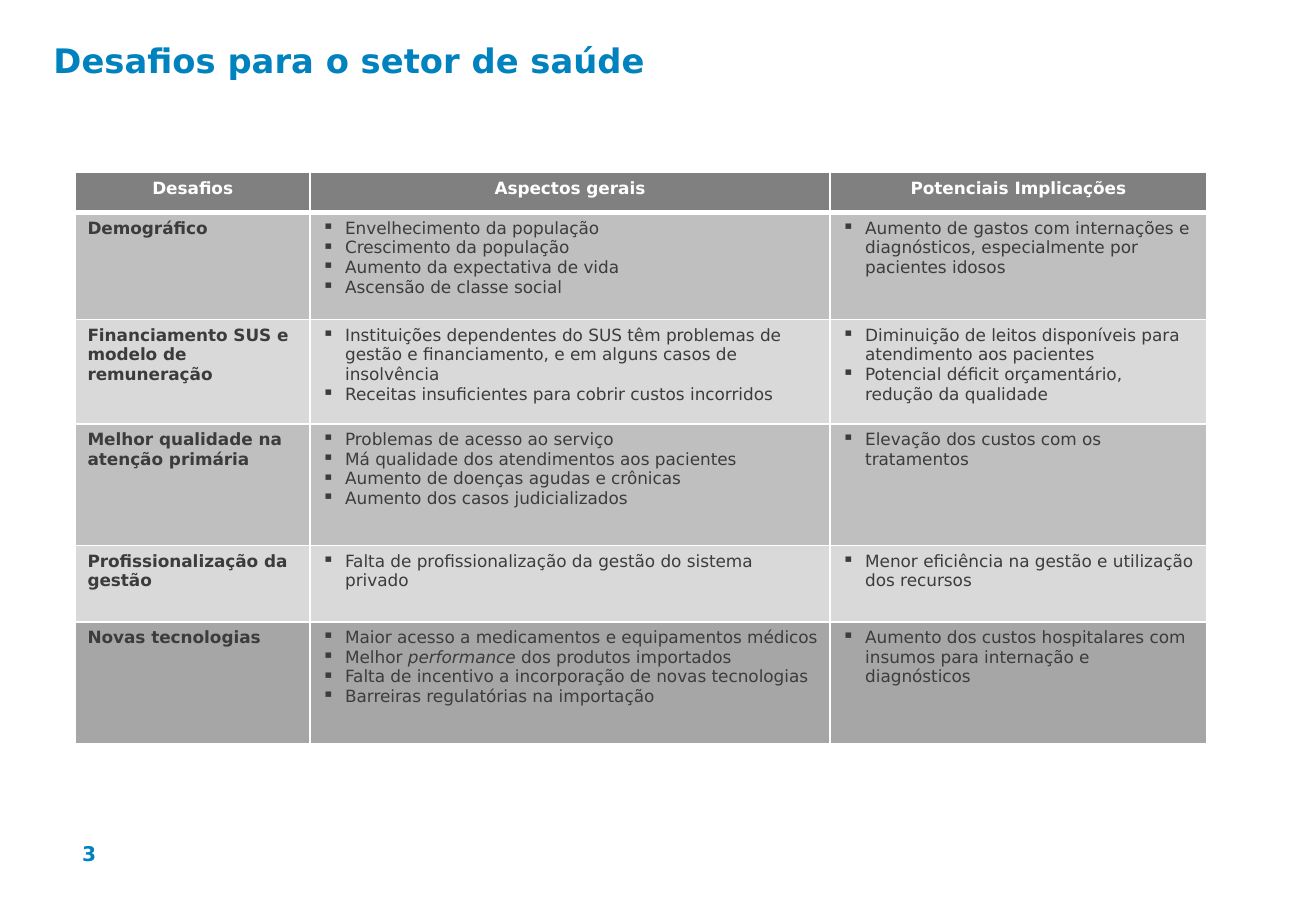
from dataclasses import dataclass

from lxml.etree import SubElement
from pptx import Presentation
from pptx.dml.color import RGBColor
from pptx.enum.text import MSO_ANCHOR, PP_ALIGN
from pptx.oxml.ns import qn
from pptx.util import Inches, Pt


@dataclass(frozen=True)
class Theme:
    font: str = "DejaVu Sans"
    blue: str = "0082BE"
    text: str = "3C3C3C"
    white: str = "FFFFFF"
    header: str = "808080"
    medium: str = "BFBFBF"
    light: str = "D9D9D9"
    dark: str = "A6A6A6"
    title_size: int = 20
    number_size: int = 12
    table_size: int = 10
    thin_line: int = 1
    header_line: int = 3


THEME = Theme()
COLUMN_WIDTHS = (1.93, 4.28, 3.1)
HEADER_HEIGHT = 0.33
HEADERS = ("Desafios", "Aspectos gerais", "Potenciais Implicações")

# Each row: height, fill, challenge, general aspects, implications; *...* is italic.
CHALLENGES = (
    (0.88, THEME.medium, "Demográfico",
     ("Envelhecimento da população",
      "Crescimento da população",
      "Aumento da expectativa de vida",
      "Ascensão de classe social"),
     ("Aumento de gastos com internações e diagnósticos, especialmente por pacientes idosos",)),
    (0.86, THEME.light, "Financiamento SUS e modelo de remuneração",
     ("Instituições dependentes do SUS têm problemas de gestão e financiamento, "
      "e em alguns casos de insolvência",
      "Receitas insuficientes para cobrir custos incorridos"),
     ("Diminuição de leitos disponíveis para atendimento aos pacientes",
      "Potencial déficit orçamentário, redução da qualidade")),
    (1, THEME.medium, "Melhor qualidade na atenção primária",
     ("Problemas de acesso ao serviço",
      "Má qualidade dos atendimentos aos pacientes",
      "Aumento de doenças agudas e crônicas",
      "Aumento dos casos judicializados"),
     ("Elevação dos custos com os tratamentos",)),
    (0.63, THEME.light, "Profissionalização da gestão",
     ("Falta de profissionalização da gestão do sistema privado",),
     ("Menor eficiência na gestão e utilização dos recursos",)),
    (1, THEME.dark, "Novas tecnologias",
     ("Maior acesso a medicamentos e equipamentos médicos",
      "Melhor *performance* dos produtos importados",
      "Falta de incentivo a incorporação de novas tecnologias",
      "Barreiras regulatórias na importação"),
     ("Aumento dos custos hospitalares com insumos para internação e diagnósticos",)),
)


def format_font(font, size, color, bold):
    values = {"name": THEME.font, "size": Pt(size), "bold": bold}
    for name, value in values.items():
        setattr(font, name, value)
    font.color.rgb = RGBColor.from_string(color)


def add_bullet(para):
    properties = para._p.get_or_add_pPr()
    indent = Inches(0.19)
    properties.set("marL", str(indent))
    properties.set("indent", str(-indent))
    SubElement(properties, qn("a:buChar"), char="▪")


def write_lines(frame, lines, size, color, bold=False, align=PP_ALIGN.LEFT, bullets=False):
    for index, line in enumerate(lines):
        para = frame.paragraphs[0] if index == 0 else frame.add_paragraph()
        para.alignment = align
        para.space_before = Pt(0)
        if bullets:
            add_bullet(para)
        for part, words in enumerate(line.split("*")):
            span = para.add_run()
            span.text = words
            format_font(span.font, size, color, bold)
            if part % 2:
                span.font.italic = True


def draw_borders(cell, top, bottom):
    properties = cell._tc.get_or_add_tcPr()
    widths = {"L": THEME.thin_line, "R": THEME.thin_line, "T": top, "B": bottom}
    for side, width in widths.items():
        line = SubElement(properties, qn(f"a:ln{side}"), w=str(Pt(width)))
        fill = SubElement(line, qn("a:solidFill"))
        SubElement(fill, qn("a:srgbClr"), val=THEME.white)


def fill_cell(cell, lines, fill, top=THEME.thin_line, bottom=THEME.thin_line,
              color=THEME.text, **text_format):
    draw_borders(cell, top, bottom)
    cell.fill.solid()
    cell.fill.fore_color.rgb = RGBColor.from_string(fill)
    write_lines(cell.text_frame, lines, THEME.table_size, color, **text_format)


def set_title(page, text):
    title = page.shapes.title
    place = {"left": 0.34, "top": 0.28, "width": 9.57, "height": 0.91}
    for name, value in place.items():
        setattr(title, name, Inches(value))
    title.text_frame.vertical_anchor = MSO_ANCHOR.TOP
    write_lines(title.text_frame, [text], THEME.title_size, THEME.blue, bold=True)


def add_challenge_table(page):
    heights = [HEADER_HEIGHT] + [row[0] for row in CHALLENGES]
    table = page.shapes.add_table(
        len(heights), len(COLUMN_WIDTHS), Inches(0.62), Inches(1.42),
        Inches(sum(COLUMN_WIDTHS)), Inches(sum(heights))).table
    table.horz_banding = False
    for column, width in zip(table.columns, COLUMN_WIDTHS):
        column.width = Inches(width)
    for row, height in zip(table.rows, heights):
        row.height = Inches(height)

    for column, text in enumerate(HEADERS):
        fill_cell(table.cell(0, column), [text], THEME.header, bottom=THEME.header_line,
                  color=THEME.white, bold=True, align=PP_ALIGN.CENTER)
    for row, (_, fill, challenge, aspects, implications) in enumerate(CHALLENGES, 1):
        top = THEME.header_line if row == 1 else THEME.thin_line
        fill_cell(table.cell(row, 0), [challenge], fill, top, bold=True)
        for column, lines in enumerate((aspects, implications), 1):
            fill_cell(table.cell(row, column), lines, fill, top, bullets=True)


def add_page_number(page, number):
    box = page.shapes.add_textbox(Inches(0.16), Inches(6.88), Inches(0.73), Inches(0.4))
    box.text_frame.word_wrap = True
    write_lines(box.text_frame, [number], THEME.number_size, THEME.blue,
                bold=True, align=PP_ALIGN.RIGHT)


def main():
    deck = Presentation()
    deck.slide_width = Inches(10.83)
    deck.slide_height = Inches(7.5)
    page = deck.slides.add_slide(deck.slide_layouts.get_by_name("Title Only"))
    set_title(page, "Desafios para o setor de saúde")
    add_challenge_table(page)
    add_page_number(page, "3")
    deck.save("out.pptx")


if __name__ == "__main__":
    main()
